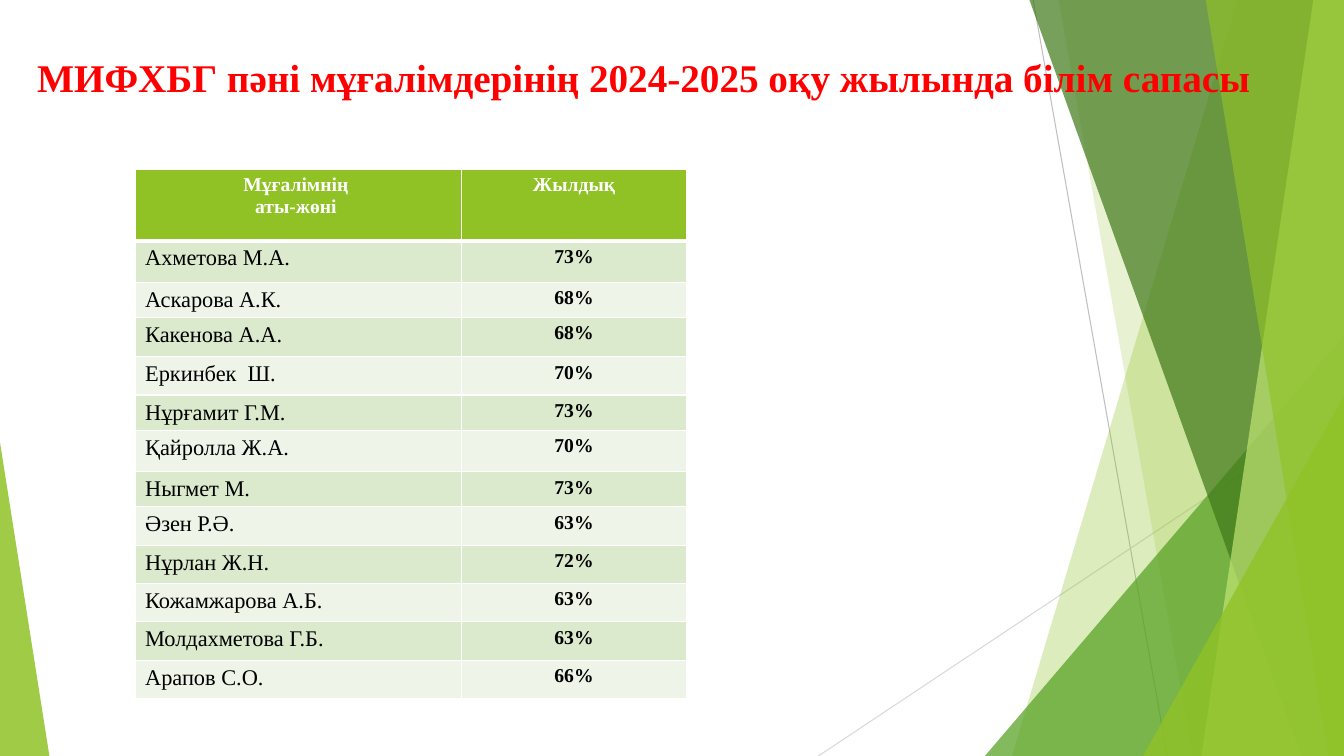
from lxml.etree import SubElement
from pptx import Presentation
from pptx.dml.color import RGBColor
from pptx.enum.shapes import MSO_CONNECTOR as CONNECTOR, MSO_SHAPE as SHAPE
from pptx.enum.text import MSO_ANCHOR as ANCHOR, PP_ALIGN as ALIGN
from pptx.oxml import parse_xml
from pptx.oxml.ns import nsdecls, qn
from pptx.util import Pt

WIDTH, HEIGHT = 960, 540
BAND_TOP = -0.7
FONT = "Times New Roman"
GREEN, WHITE, BLACK, RED = "90C226", "FFFFFF", "000000", "FF0000"
STRIPES = ("DBE9CD", "EEF4E8")
HEADINGS = (("Мұғалімнің ", "аты-жөні "), ("Жылдық",))
RESULTS = (
    ("Ахметова М.А.", "73%", 29.5),
    ("Аскарова А.К.", "68%", 25.2),
    ("Какенова А.А.", "68%", 28),
    ("Еркинбек  Ш.", "70%", 27.4),
    ("Нұрғамит Г.М.", "73%", 25.2),
    ("Қайролла Ж.А.", "70%", 29.5),
    ("Ныгмет М.", "73%", 25.2),
    ("Әзен Р.Ә.", "63%", 27.4),
    ("Нұрлан Ж.Н.", "72%", 27.4),
    ("Кожамжарова А.Б.", "63%", 27.4),
    ("Молдахметова Г.Б.", "63%", 27.4),
    ("Арапов С.О.", "66%", 27.4),
)


def color(code):
    """Turn a hex string into a colour."""
    return RGBColor.from_string(code)


def paint(facet, code, opacity):
    """Give a facet a translucent fill with no line or shadow."""
    facet.shadow.inherit = False
    facet.line.fill.background()
    facet.fill.solid()
    facet.fill.fore_color.rgb = color(code)
    tint = facet.fill._xPr.find(qn("a:solidFill"))[0]
    SubElement(tint, qn("a:alpha")).set("val", str(opacity * 1000))


def add_band(slide, top_x, bottom_x, code, opacity):
    """Add a slanted band that reaches the right edge of the slide."""
    outline = slide.shapes.build_freeform(Pt(top_x), Pt(BAND_TOP), scale=1.0)
    corners = ((WIDTH, BAND_TOP), (WIDTH, HEIGHT), (bottom_x, HEIGHT))
    outline.add_line_segments([(Pt(x), Pt(y)) for x, y in corners], close=True)
    paint(outline.convert_to_shape(), code, opacity)


def add_corner(slide, left, top, width, apex, code, opacity):
    """Add a right triangle that stands on the bottom edge."""
    corner = slide.shapes.add_shape(
        SHAPE.ISOSCELES_TRIANGLE, Pt(left), Pt(top), Pt(width), Pt(HEIGHT - top))
    corner.adjustments[0] = apex
    paint(corner, code, opacity)


def add_ray(slide, start, end, code):
    """Add a thin straight line."""
    ray = slide.shapes.add_connector(
        CONNECTOR.STRAIGHT, *(Pt(value) for value in start + end))
    ray.line.color.rgb = color(code)
    ray.line.width = Pt(0.75)
    SubElement(ray._element.spPr, qn("a:effectLst"))


def write(paragraph, text, size, code, bold=True, align=ALIGN.CENTER):
    """Write one run into a paragraph."""
    paragraph.alignment = align
    run = paragraph.add_run()
    run.text = text
    run.font.name = FONT
    run.font.size = Pt(size)
    run.font.bold = bold
    run.font.color.rgb = color(code)


def dress_cell(cell, code, bottom=1):
    """Fill a cell and draw its white borders."""
    cell.fill.solid()
    cell.fill.fore_color.rgb = color(code)
    properties = cell._tc.get_or_add_tcPr()
    for place, (side, weight) in enumerate(
            (("lnL", 1), ("lnR", 1), ("lnT", 1), ("lnB", bottom))):
        properties.insert(place, parse_xml(
            f'<a:{side} {nsdecls("a")} w="{Pt(weight)}"><a:solidFill>'
            f'<a:srgbClr val="{WHITE}"/></a:solidFill></a:{side}>'))


def add_results(slide):
    """Add the table of teachers and their yearly quality figures."""
    heights = [51.1] + [height for _, _, height in RESULTS]
    results = slide.shapes.add_table(
        len(heights), len(HEADINGS), Pt(96.5), Pt(121), Pt(393.9), Pt(sum(heights))).table
    for column, width in zip(results.columns, (233.3, 160.6)):
        column.width = Pt(width)
    for row, height in zip(results.rows, heights):
        row.height = Pt(height)
    for index, lines in enumerate(HEADINGS):
        heading = results.cell(0, index)
        dress_cell(heading, GREEN, bottom=3)
        frame = heading.text_frame
        for number, text in enumerate(lines):
            write(frame.add_paragraph() if number else frame.paragraphs[0], text, 14, WHITE)
    for index, (teacher, quality, _) in enumerate(RESULTS):
        name_cell, quality_cell = results.rows[index + 1].cells
        for cell in (name_cell, quality_cell):
            dress_cell(cell, STRIPES[index % 2], bottom=1)
        if index == 0:
            for cell in (name_cell, quality_cell):
                cell._tc.tcPr.find(qn("a:lnT")).set("w", str(Pt(3)))
        write(name_cell.text_frame.paragraphs[0], teacher, 16, BLACK, False, ALIGN.LEFT)
        write(quality_cell.text_frame.paragraphs[0], quality, 14, BLACK)


def add_title(slide, text):
    """Add the red slide title."""
    frame = slide.shapes.add_textbox(Pt(13.7), Pt(33.8), Pt(892), Pt(42.5)).text_frame
    frame.word_wrap = True
    frame.vertical_anchor = ANCHOR.MIDDLE
    write(frame.paragraphs[0], text, 28, RED)


def add_backdrop(slide):
    """Add the green facets from back to front."""
    add_ray(slide, (738, 0), (833.8, HEIGHT), "BFBFBF")
    add_ray(slide, (WIDTH, 290.2), (584.6, HEIGHT), "D9D9D9")
    add_band(slide, 884.2, 722.9, GREEN, 30)
    add_band(slide, 756, 851.8, GREEN, 20)
    add_corner(slide, 703.5, 239.8, 256.5, 1, "54A021", 72)
    add_band(slide, 735.1, 929.5, "3F7819", 70)
    add_band(slide, 938.2, 858.2, "C0E474", 70)
    add_band(slide, 861.1, 949, GREEN, 65)
    add_corner(slide, 816.5, 283, 143.5, 1, GREEN, 80)
    add_corner(slide, 0, 316, 35.3, 0, GREEN, 85)


def main():
    """Build and save the slide."""
    deck = Presentation()
    deck.slide_width, deck.slide_height = Pt(WIDTH), Pt(HEIGHT)
    slide = deck.slides.add_slide(deck.slide_layouts[6])
    add_backdrop(slide)
    add_results(slide)
    add_title(slide, "МИФХБГ пәні мұғалімдерінің 2024-2025 оқу жылында білім сапасы")
    deck.save("out.pptx")


if __name__ == "__main__":
    main()
